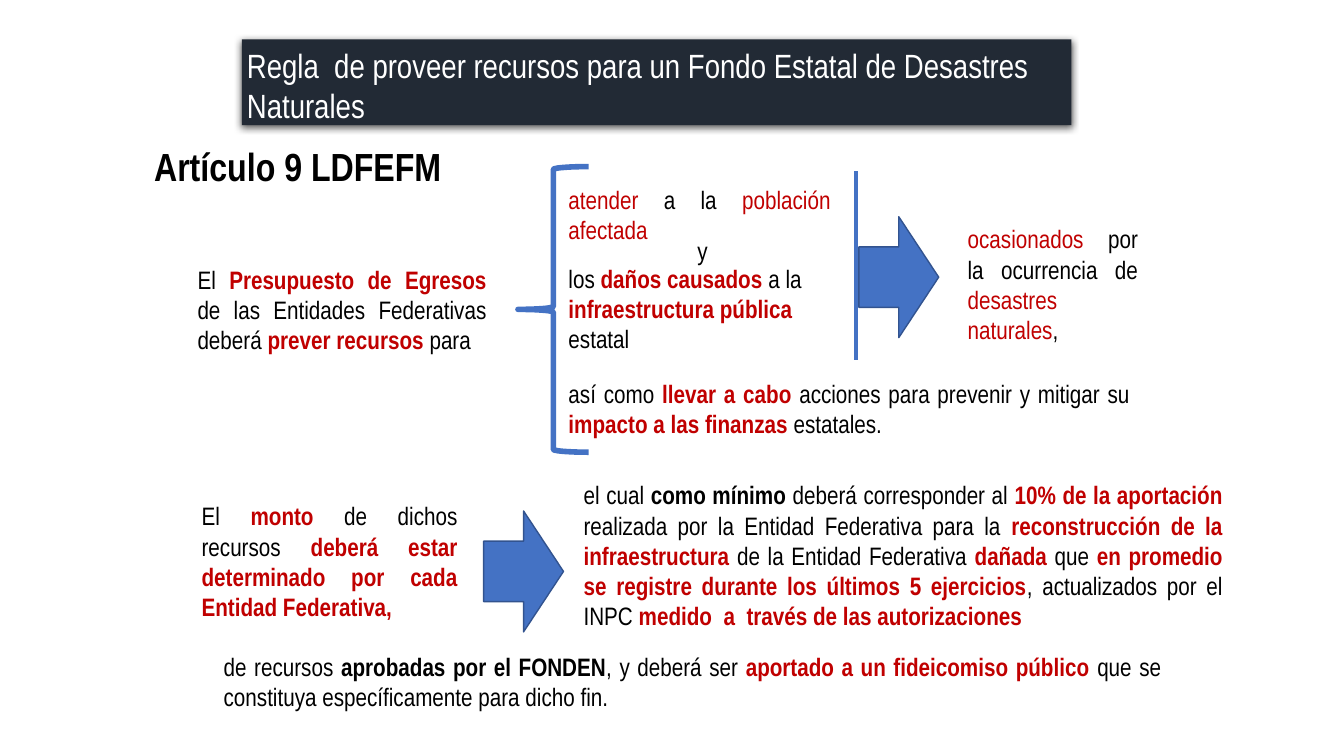
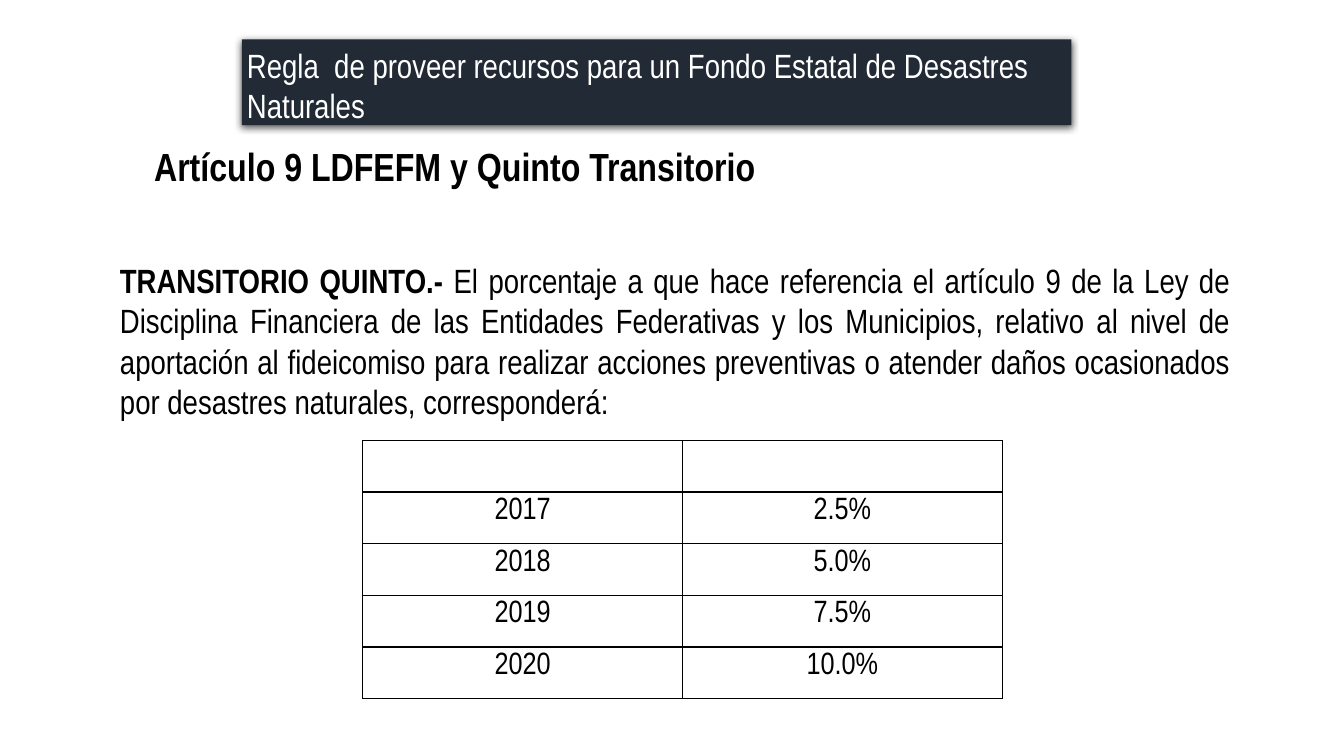
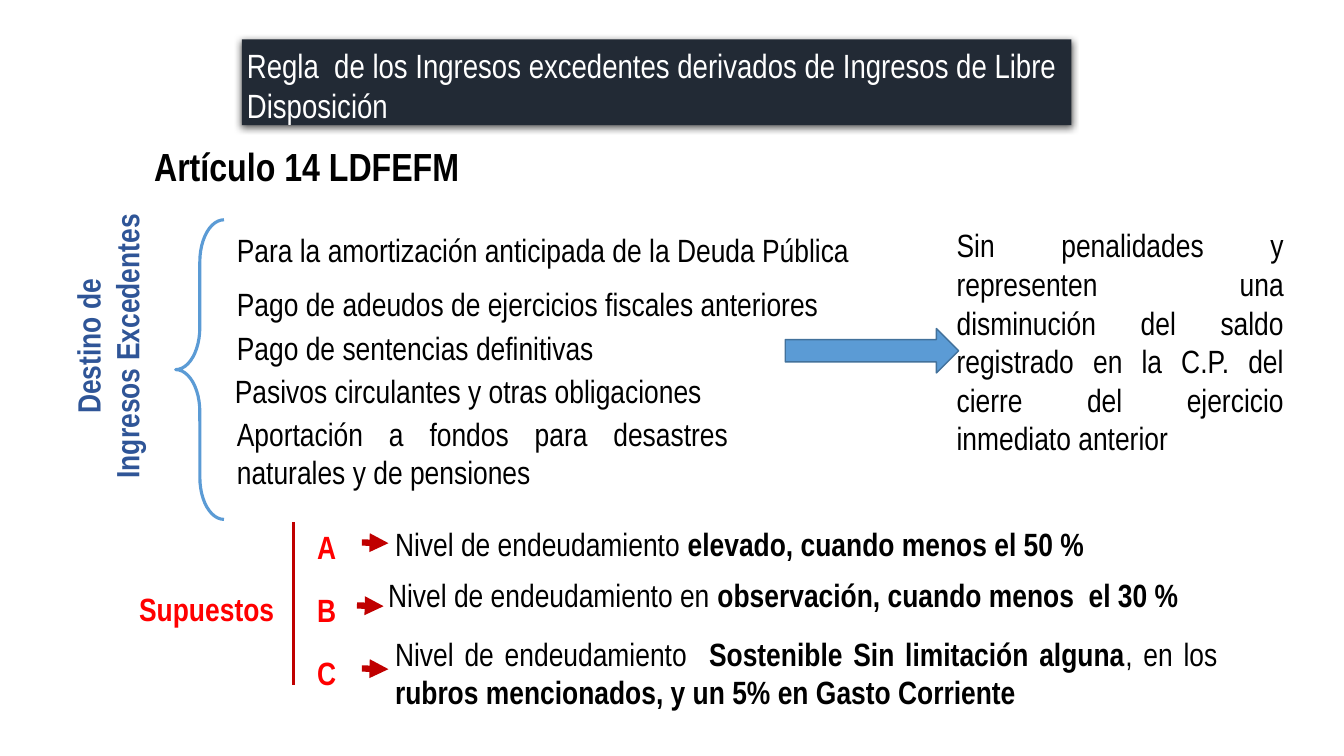
import pptx
import pptx.util
import pptx.dml.color
import pptx.enum.shapes
import pptx.enum.text
import pptx.oxml
import pptx.oxml.ns
import lxml.etree

Pt = pptx.util.Pt
Shape = pptx.enum.shapes.MSO_SHAPE
Align = pptx.enum.text.PP_ALIGN

# Shared look
FONT = "Arial Narrow"
INSET = 3.6
BLACK, WHITE, NAVY = "000000", "FFFFFF", "222A35"
CRIMSON, RED = "C00000", "FF0000"
BLUE, BLUE_EDGE = "4472C4", "32538F"
SKY, SKY_EDGE = "5B9BD5", "42719B"
DEEP_BLUE = "2F5597"

# Emphasis of a run: colour (None keeps that of the text) and bold
STYLES = {"plain": (None, False), "bold": (None, True),
          "red": (CRIMSON, False), "key": (CRIMSON, True)}


def rgb(value):
    return pptx.dml.color.RGBColor.from_string(value)


def add_xml(parent, content):
    """Append a DrawingML element, given as text, to parent."""
    namespace = pptx.oxml.ns.nsdecls("a")
    tag, rest = content[:-1].split(">", 1) if ">" in content[:-1] else (content[:-2], None)
    xml = f"{tag} {namespace}/>" if rest is None else f"{tag} {namespace}>{rest}>"
    parent.append(pptx.oxml.parse_xml(xml))


# Text
def prepare_frame(frame, wrap=True):
    frame.word_wrap = wrap
    frame.vertical_anchor = pptx.enum.text.MSO_ANCHOR.TOP
    frame.margin_left = frame.margin_right = Pt(INSET)
    frame.margin_top = frame.margin_bottom = Pt(INSET)


def format_run(run, size, color, bold):
    run.font.name = FONT
    run.font.size = Pt(size)
    run.font.bold = bold
    run.font.color.rgb = rgb(color)


def write(paragraph, content, size, color=BLACK, bold=False, align=Align.LEFT):
    """Content is a string, or a list of (text, style) pairs."""
    paragraph.alignment = align
    if isinstance(content, str):
        content = [(content, "bold" if bold else "plain")]
    for words, style in content:
        run = paragraph.add_run()
        run.text = words
        accent, is_bold = STYLES[style]
        format_run(run, size, accent or color, is_bold)


def add_text(slide, box, *paragraphs, size=18, wrap=True, **look):
    label = slide.shapes.add_textbox(*map(Pt, box))
    frame = label.text_frame
    prepare_frame(frame, wrap)
    for number, content in enumerate(paragraphs):
        paragraph = frame.add_paragraph() if number else frame.paragraphs[0]
        write(paragraph, content, size, **look)
    return label


# Shapes and lines
def add_arrow(slide, box, fill, edge):
    arrow = slide.shapes.add_shape(Shape.RIGHT_ARROW, *map(Pt, box))
    arrow.shadow.inherit = False
    arrow.fill.solid()
    arrow.fill.fore_color.rgb = rgb(fill)
    arrow.line.color.rgb = rgb(edge)
    arrow.line.width = Pt(1)


def add_brace(slide, box, curve, color, width):
    brace = slide.shapes.add_shape(Shape.LEFT_BRACE, *map(Pt, box))
    brace.shadow.inherit = False
    brace.adjustments[0] = curve
    brace.fill.background()
    brace.line.color.rgb = rgb(color)
    brace.line.width = Pt(width)


def add_line(slide, start, end, color, width, arrowhead=False):
    line = slide.shapes.add_connector(
        pptx.enum.shapes.MSO_CONNECTOR.STRAIGHT, *map(Pt, start + end))
    line.line.color.rgb = rgb(color)
    line.line.width = Pt(width)
    if arrowhead:
        add_xml(line.line._get_or_add_ln(), '<a:tailEnd type="triangle"/>')
    add_xml(line._element.spPr, "<a:effectLst/>")


# Slide with title band and article heading
def add_slide(deck, title, article, article_width=300):
    slide = deck.slides.add_slide(deck.slide_layouts[6])
    add_text(slide, (106.5, 98, article_width, 39), article, size=28, bold=True)
    band = slide.shapes.add_shape(Shape.RECTANGLE, Pt(172.8), Pt(28.2), Pt(592.5), Pt(61.2))
    band.fill.solid()
    band.fill.fore_color.rgb = rgb(NAVY)
    band.line.fill.background()
    add_xml(band._element.spPr,
            f'<a:effectLst><a:outerShdw blurRad="{Pt(5)}" dist="{Pt(1.5)}" dir="5400000">'
            f'<a:srgbClr val="{BLACK}"><a:alpha val="63000"/></a:srgbClr>'
            '</a:outerShdw></a:effectLst>')
    prepare_frame(band.text_frame)
    write(band.text_frame.paragraphs[0], title, 24, WHITE)
    return slide


# Table
def add_grid(slide, box, rows):
    table = slide.shapes.add_table(len(rows), len(rows[0]), *map(Pt, box)).table
    table.first_row = table.horz_banding = False
    for r, row in enumerate(rows):
        table.rows[r].height = Pt(box[3] / len(rows))
        for c, words in enumerate(row):
            cell = table.cell(r, c)
            cell.margin_left = cell.margin_right = Pt(INSET)
            cell.margin_top = cell.margin_bottom = Pt(INSET)
            if words:
                write(cell.text_frame.paragraphs[0], words, 22, align=Align.CENTER)
            for side in ("lnL", "lnR", "lnT", "lnB"):
                add_xml(cell._tc.get_or_add_tcPr(),
                        f'<a:{side} w="{Pt(1)}"><a:solidFill><a:srgbClr val="{BLACK}"/>'
                        f'</a:solidFill></a:{side}>')
            cell.fill.background()


def disaster_fund(deck, title):
    slide = add_slide(deck, title, "Artículo 9 LDFEFM")

    # Braces, arrows and divider
    add_brace(slide, (370, 119, 50.5, 204), 0.04, BLUE, 4)
    for left, top in ((613.5, 154.8), (345.5, 365)):
        add_arrow(slide, (left, top, 57, 86.4), BLUE, BLUE_EDGE)
    add_line(slide, (611.3, 122.4), (611.3, 257), BLUE, 3)

    # Justified passages
    passages = [
        ((137.5, 185, 213.8, 70),
         [("El ", "plain"), ("Presupuesto de Egresos ", "key"),
          ("de las Entidades Federativas deberá ", "plain"),
          ("prever recursos", "key"), (" para", "plain")]),
        ((402.5, 128.2, 194.4, 49),
         [("atender", "red"), (" a la ", "plain"), ("población afectada", "red")]),
        ((402.5, 266.4, 408.2, 49),
         [("así como ", "plain"), ("llevar a cabo", "key"),
          (" acciones para prevenir y mitigar su ", "plain"),
          ("impacto a las finanzas ", "key"), ("estatales.", "plain")]),
        ((687.6, 156.2, 128.9, 91.4),
         [("ocasionados ", "red"), ("por la ocurrencia de ", "plain"),
          ("desastres naturales", "red"), (",", "plain")]),
        ((140.4, 354.2, 190, 91.4),
         [("El ", "plain"), ("monto", "key"), (" de dichos recursos ", "plain"),
          ("deberá estar determinado por cada Entidad Federativa,", "key")]),
        ((413.3, 339.1, 463.7, 112.3),
         [("el cual ", "plain"), ("como mínimo ", "bold"),
          ("deberá corresponder al ", "plain"), ("10% de la aportación ", "key"),
          ("realizada por la Entidad Federativa para la ", "plain"),
          ("reconstrucción de la infraestructura ", "key"),
          ("de la Entidad Federativa ", "plain"), ("dañada", "key"), (" que ", "plain"),
          ("en promedio se registre durante los últimos 5 ejercicios", "key"),
          (", actualizados por el INPC ", "plain"),
          ("medido  a  través de las autorizaciones", "key")]),
        ((156.2, 461.5, 676.8, 49),
         [("de recursos ", "plain"), ("aprobadas por el FONDEN", "bold"),
          (", y deberá ser ", "plain"), ("aportado a un fideicomiso público ", "key"),
          ("que se constituya específicamente para dicho fin.", "plain")]),
    ]
    for box, content in passages:
        add_text(slide, box, content, align=Align.JUSTIFY)

    # Left-aligned passages
    add_text(slide, (402.5, 184.3, 211, 70),
             [("los ", "plain"), ("daños causados ", "key"), ("a la ", "plain"),
              ("infraestructura pública ", "key"), ("estatal", "plain")])
    add_text(slide, (494.6, 164.2, 19.4, 28), "y", wrap=False)


def transitory_article(deck, title):
    slide = add_slide(deck, title, "Artículo 9 LDFEFM y Quinto Transitorio", 495)
    add_text(slide, (82.1, 182.2, 800, 115),
             [("TRANSITORIO QUINTO.- ", "bold"),
              ("El porcentaje a que hace referencia el artículo 9 de la Ley de Disciplina "
               "Financiera de las Entidades Federativas y los Municipios, relativo al nivel "
               "de aportación al fideicomiso para realizar acciones preventivas o atender "
               "daños ocasionados por desastres naturales, corresponderá:", "plain")],
             size=24, align=Align.JUSTIFY)
    add_grid(slide, (259, 314.6, 457, 184.5),
             [("", ""), ("2017", "2.5%"), ("2018", "5.0%"),
              ("2019", "7.5%"), ("2020", "10.0%")])


def surplus_income(deck):
    slide = add_slide(
        deck, "Regla  de los Ingresos excedentes derivados de Ingresos de Libre Disposición",
        "Artículo 14 LDFEFM")
    size = 23

    # Uses of the surplus
    uses = add_text(slide, (-22.3, 216.7, 196.6, 61.2), "Destino de", "Ingresos Excedentes",
                    size=size, wrap=False, color=DEEP_BLUE, bold=True, align=Align.CENTER)
    uses.rotation = 270
    add_brace(slide, (125.5, 157, 34.5, 214), 0.87, SKY, 2.25)
    for left, top, width, use in (
            (165.6, 161.3, 450.7, "Para la amortización anticipada de la Deuda Pública"),
            (165.6, 199.4, 428.4, "Pago de adeudos de ejercicios fiscales anteriores"),
            (165.6, 231.1, 262.8, "Pago de sentencias definitivas"),
            (164.2, 261.4, 341.3, "Pasivos circulantes y otras obligaciones")):
        add_text(slide, (left, top, width, 34.6), use, size=size, wrap=False)
    add_text(slide, (165.6, 292.3, 358.6, 61.2),
             "Aportación a fondos para desastres naturales y de pensiones",
             size=size, align=Align.JUSTIFY)

    # Condition
    add_arrow(slide, (560.9, 234.7, 123.8, 31.7), SKY, SKY_EDGE)
    add_text(slide, (679.7, 157.7, 241.2, 169.2),
             "Sin penalidades y representen una disminución del saldo registrado en la C.P. "
             "del cierre del ejercicio inmediato anterior", size=size, align=Align.JUSTIFY)

    # Cases by level of debt
    red_label = {"size": size, "color": RED, "bold": True}
    add_text(slide, (95.8, 417.6, 104.4, 34.6), "Supuestos", wrap=False, **red_label)
    add_line(slide, (209.5, 373), (209.5, 489.6), CRIMSON, 2.25)
    cases = [
        ("A", 258.5, (278.6, 370.8, 563, 34.6),
         [("Nivel de endeudamiento ", "plain"),
          ("elevado, cuando menos el 50 %", "bold")]),
        ("B", 255, (273.6, 407.5, 600, 34.6),
         [("Nivel de endeudamiento en ", "plain"),
          ("observación, cuando menos  el 30 %", "bold")]),
        ("C", 258.5, (278.6, 449.3, 594.7, 61.2),
         [("Nivel de endeudamiento  ", "plain"),
          ("Sostenible Sin limitación alguna", "bold"), (", en los ", "plain"),
          ("rubros mencionados, y un 5% en Gasto Corriente", "bold")]),
    ]
    for number, (letter, arrow_left, box, content) in enumerate(cases):
        drop = 45 * number
        add_text(slide, (223, 373 + drop, 28.8, 34.6), letter, **red_label)
        add_line(slide, (arrow_left, 387.5 + drop), (arrow_left + 19, 388 + drop),
                 CRIMSON, 4.5, arrowhead=True)
        add_text(slide, box, content, size=size, align=Align.JUSTIFY)


def main():
    deck = pptx.Presentation()
    deck.slide_width, deck.slide_height = Pt(960), Pt(540)
    fund_title = "Regla  de proveer recursos para un Fondo Estatal de Desastres Naturales"
    disaster_fund(deck, fund_title)
    transitory_article(deck, fund_title)
    surplus_income(deck)
    deck.save("out.pptx")


if __name__ == "__main__":
    main()
